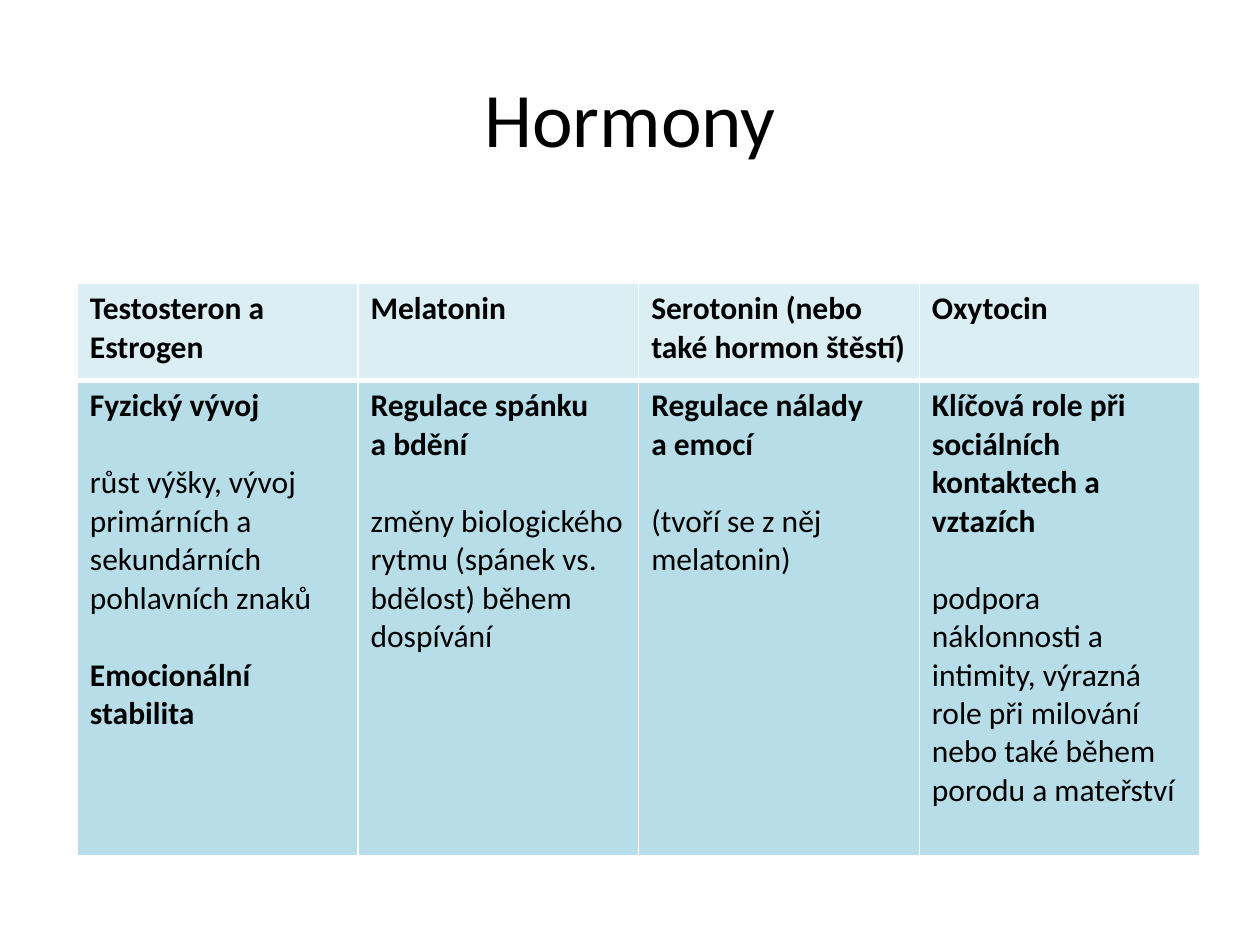
from dataclasses import dataclass

from lxml import etree
from pptx import Presentation
from pptx.dml.color import RGBColor
from pptx.enum import text
from pptx.oxml import ns
from pptx.util import Pt

BLACK = RGBColor(0x00, 0x00, 0x00)
WHITE = RGBColor(0xFF, 0xFF, 0xFF)
PALE_BLUE = RGBColor(0xDB, 0xEE, 0xF4)
LIGHT_BLUE = RGBColor(0xB7, 0xDE, 0xE8)

FONT = "Calibri"
BODY_SIZE = Pt(18)
BLOCK_GAP = Pt(22)
THIN, THICK = Pt(1), Pt(3)
COLUMN_WIDTH = Pt(160.4)
HEADER_HEIGHT, EFFECTS_HEIGHT = Pt(55.5), Pt(271.5)


@dataclass(frozen=True)
class Block:
    """Consecutive lines of one weight, set apart from the next block."""
    lines: tuple[str, ...]
    bold: bool = False


@dataclass(frozen=True)
class Hormone:
    name: str
    effects: tuple[Block, ...]


HORMONES = (
    Hormone("Testosteron a Estrogen", (
        Block(("Fyzický vývoj",), bold=True),
        Block(("růst výšky, vývoj", "primárních a", "sekundárních", "pohlavních znaků")),
        Block(("Emocionální", "stabilita"), bold=True),
    )),
    Hormone("Melatonin", (
        Block(("Regulace spánku", "a bdění"), bold=True),
        Block(("změny biologického rytmu (spánek vs. bdělost) během dospívání",)),
    )),
    Hormone("Serotonin (nebo také hormon štěstí)", (
        Block(("Regulace nálady", "a emocí"), bold=True),
        Block(("(tvoří se z něj melatonin)",)),
    )),
    Hormone("Oxytocin", (
        Block(("Klíčová role při", "sociálních", "kontaktech a", "vztazích"), bold=True),
        Block(("podpora náklonnosti a intimity, výrazná role při milování "
               "nebo také během porodu a mateřství",)),
    )),
)


def style_font(paragraph, size: Pt, bold: bool = False) -> None:
    font = paragraph.font
    font.name, font.size, font.bold = FONT, size, bold
    font.color.rgb = BLACK


def add_borders(cell, top: Pt, bottom: Pt) -> None:
    properties = cell._tc.get_or_add_tcPr()
    for side, width in (("L", THIN), ("R", THIN), ("T", top), ("B", bottom)):
        line = etree.SubElement(properties, ns.qn(f"a:ln{side}"), w=str(width))
        fill = etree.SubElement(line, ns.qn("a:solidFill"))
        etree.SubElement(fill, ns.qn("a:srgbClr"), val=str(WHITE))


def fill_cell(cell, blocks: tuple[Block, ...], color: RGBColor, top: Pt, bottom: Pt) -> None:
    add_borders(cell, top, bottom)
    cell.fill.solid()
    cell.fill.fore_color.rgb = color
    paragraph = None
    for block_index, block in enumerate(blocks):
        for line_index, line in enumerate(block.lines):
            frame = cell.text_frame
            paragraph = frame.add_paragraph() if paragraph else frame.paragraphs[0]
            paragraph.text = line
            style_font(paragraph, BODY_SIZE, block.bold)
            if block_index and not line_index:
                paragraph.space_before = BLOCK_GAP


def add_title(slide, wording: str) -> None:
    title = slide.shapes.title
    title.left, title.top, title.width, title.height = Pt(36), Pt(21.6), Pt(648), Pt(90)
    title.text_frame.text = wording
    title.text_frame.vertical_anchor = text.MSO_ANCHOR.MIDDLE
    heading = title.text_frame.paragraphs[0]
    heading.alignment = text.PP_ALIGN.CENTER
    style_font(heading, Pt(44))


def add_hormone_table(slide, hormones: tuple[Hormone, ...]) -> None:
    table = slide.shapes.add_table(
        2, len(hormones), Pt(44.2), Pt(162),
        COLUMN_WIDTH * len(hormones), HEADER_HEIGHT + EFFECTS_HEIGHT,
    ).table
    table.rows[0].height, table.rows[1].height = HEADER_HEIGHT, EFFECTS_HEIGHT
    for column, hormone in enumerate(hormones):
        table.columns[column].width = COLUMN_WIDTH
        name = Block((hormone.name,), bold=True)
        fill_cell(table.cell(0, column), (name,), PALE_BLUE, THIN, THICK)
        fill_cell(table.cell(1, column), hormone.effects, LIGHT_BLUE, THICK, THIN)


def main() -> None:
    presentation = Presentation()
    presentation.slide_width, presentation.slide_height = Pt(720), Pt(540)
    slide = presentation.slides.add_slide(presentation.slide_layouts[5])
    add_title(slide, "Hormony")
    add_hormone_table(slide, HORMONES)
    presentation.save("out.pptx")


if __name__ == "__main__":
    main()
